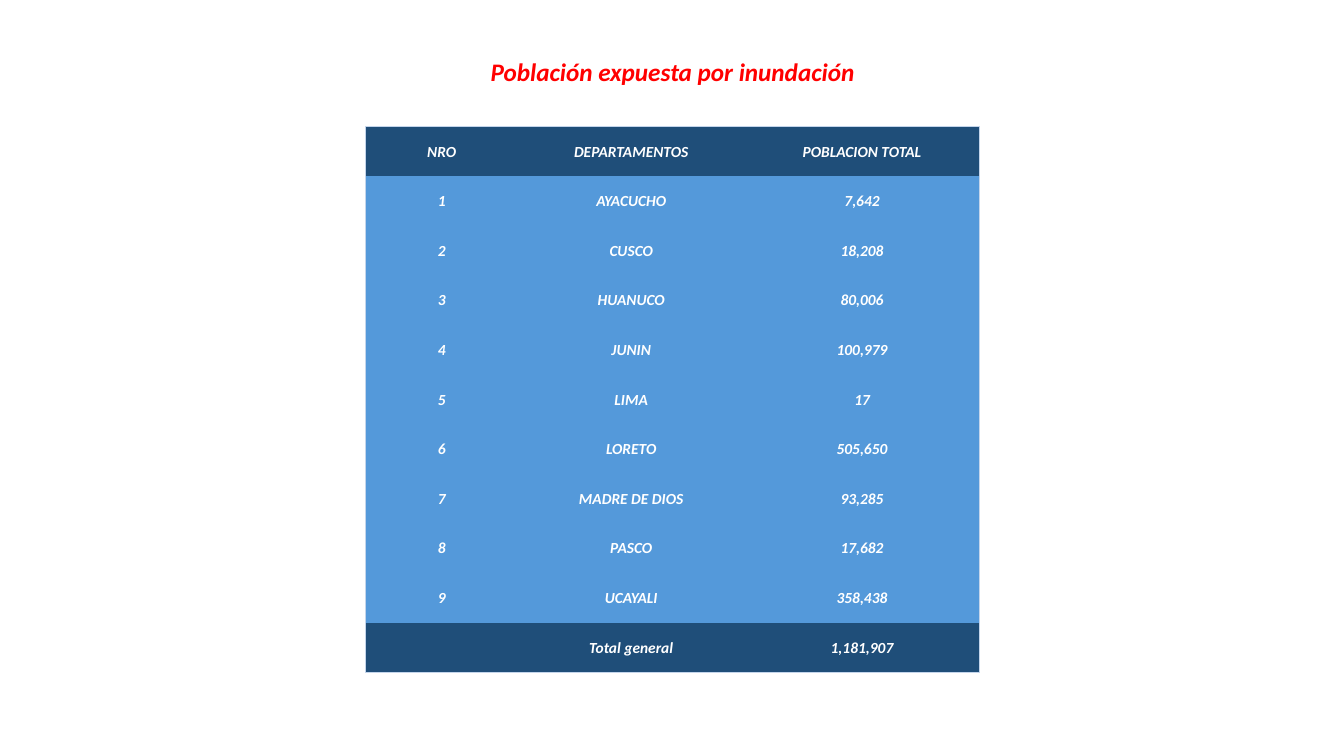
from dataclasses import dataclass

from lxml.etree import SubElement
from pptx import Presentation
from pptx.dml.color import RGBColor
from pptx.enum.text import MSO_ANCHOR, PP_ALIGN
from pptx.oxml.ns import qn
from pptx.util import Pt


@dataclass(frozen=True)
class Theme:
    font: str = "Calibri"
    title_size: float = 18
    table_size: float = 11
    title: str = "FF0000"
    table_text: str = "FFFFFF"
    band: str = "1F4E79"
    body: str = "5499DA"
    border: str = "C4D5EB"


THEME = Theme()
COLUMN_WIDTHS = (108.7, 162, 167.8)
ROW_HEIGHT = 35.45
ROWS = (
    ("NRO", "DEPARTAMENTOS", "POBLACION TOTAL"),
    ("1", "AYACUCHO", "7,642"),
    ("2", "CUSCO", "18,208"),
    ("3", "HUANUCO", "80,006"),
    ("4", "JUNIN", "100,979"),
    ("5", "LIMA", "17"),
    ("6", "LORETO", "505,650"),
    ("7", "MADRE DE DIOS", "93,285"),
    ("8", "PASCO", "17,682"),
    ("9", "UCAYALI", "358,438"),
    ("", "Total general", "1,181,907"),
)


def put_text(text_frame, text, *, size, color, bold=True, italic=True):
    paragraph = text_frame.paragraphs[0]
    paragraph.alignment = PP_ALIGN.CENTER
    if not text:
        return
    run = paragraph.add_run()
    run.text = text
    font = run.font
    font.name, font.size = THEME.font, Pt(size)
    font.bold, font.italic = bold, italic
    font.color.rgb = RGBColor.from_string(color)


def add_title(slide, text, left, top, width, height):
    shape = slide.shapes.add_textbox(Pt(left), Pt(top), Pt(width), Pt(height))
    shape.text_frame.word_wrap = False
    put_text(shape.text_frame, text, size=THEME.title_size, color=THEME.title)


def set_borders(cell, visible):
    """Draw the named edges (L, R, T, B) and clear the others; call before filling."""
    properties = cell._tc.get_or_add_tcPr()
    for edge in "LRTB":
        line = SubElement(properties, qn(f"a:ln{edge}"), w=str(Pt(0.5)))
        if edge in visible:
            fill = SubElement(line, qn("a:solidFill"))
            SubElement(fill, qn("a:srgbClr"), val=THEME.border)
        else:
            SubElement(line, qn("a:noFill"))


def format_cell(cell, text, fill, edges):
    cell.margin_left = cell.margin_right = cell.margin_top = Pt(0.7)
    cell.margin_bottom = Pt(0)
    cell.vertical_anchor = MSO_ANCHOR.MIDDLE
    set_borders(cell, edges)
    cell.fill.solid()
    cell.fill.fore_color.rgb = RGBColor.from_string(fill)
    put_text(cell.text_frame, text, size=THEME.table_size, color=THEME.table_text)


def add_population_table(slide, left, top):
    last_row, last_column = len(ROWS) - 1, len(COLUMN_WIDTHS) - 1
    table = slide.shapes.add_table(
        len(ROWS), len(COLUMN_WIDTHS), Pt(left), Pt(top),
        Pt(sum(COLUMN_WIDTHS)), Pt(ROW_HEIGHT * len(ROWS)),
    ).table
    for column, width in zip(table.columns, COLUMN_WIDTHS):
        column.width = Pt(width)
    for r, texts in enumerate(ROWS):
        table.rows[r].height = Pt(ROW_HEIGHT)
        fill = THEME.band if r in (0, last_row) else THEME.body
        for c, text in enumerate(texts):
            outer = {"L": c == 0, "R": c == last_column, "T": r == 0, "B": r == last_row}
            edges = [edge for edge, is_outer in outer.items() if is_outer]
            format_cell(table.cell(r, c), text, fill, edges)


def main():
    presentation = Presentation()
    presentation.slide_width, presentation.slide_height = Pt(960), Pt(540)
    slide = presentation.slides.add_slide(presentation.slide_layouts[6])
    add_title(slide, "Población expuesta por inundación", 342, 36.7, 277, 29)
    add_population_table(slide, 261.2, 90.3)
    presentation.save("out.pptx")


if __name__ == "__main__":
    main()
